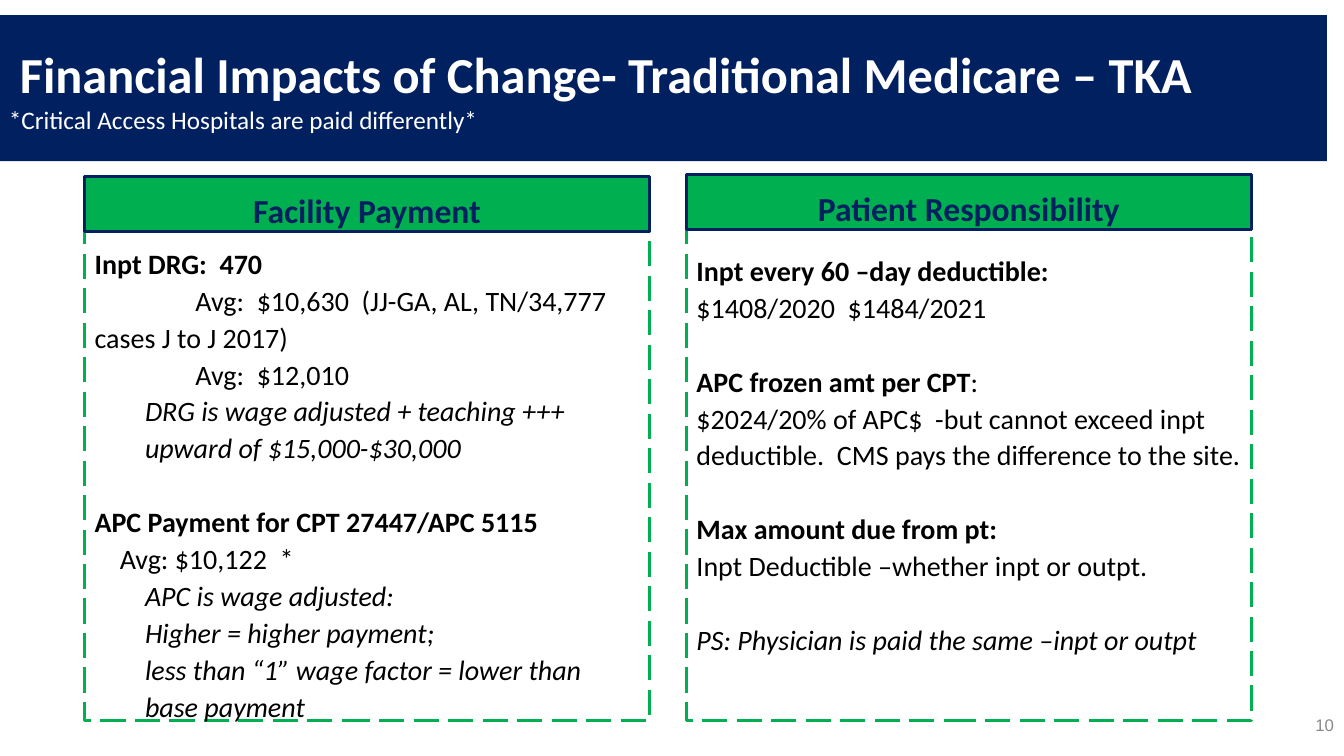
from pptx import Presentation
from pptx.dml.color import RGBColor
from pptx.enum.dml import MSO_LINE
from pptx.enum.shapes import MSO_SHAPE
from pptx.enum.text import MSO_ANCHOR, PP_ALIGN
from pptx.oxml.ns import qn
from pptx.util import Inches, Pt
from lxml.etree import SubElement

NAVY = RGBColor(0x00, 0x20, 0x60)
GREEN = RGBColor(0x00, 0xB0, 0x50)
WHITE = RGBColor(0xFF, 0xFF, 0xFF)
BLACK = RGBColor(0x00, 0x00, 0x00)
GRAY = RGBColor(0x89, 0x89, 0x89)

SLIDE_WIDTH, SLIDE_HEIGHT = 13.33, 7.5
COLUMN_WIDTH, COLUMN_BOTTOM = 5.6, 7.15
HEADER_HEIGHT = 0.55
BLANK_LINE = 26.4

BOLD, PLAIN, ITALIC = "bold", "plain", "italic"

# Each paragraph: runs, left margin, first-line indent, space before in lines
FACILITY_PAYMENT = [
    ([("Inpt DRG:  470", BOLD)], 0, 0, 0),
    ([("Avg:  $10,630  (JJ-GA, AL, TN/34,777 cases J to J 2017)", PLAIN)], 0, 1, 0),
    ([("Avg:  $12,010", PLAIN)], 0, 1, 0),
    ([("DRG is wage adjusted + teaching +++  upward of $15,000-$30,000", ITALIC)], 0.5, 0, 0),
    ([("APC Payment for CPT 27447/APC 5115", BOLD)], 0, 0, 1),
    ([("Avg: $10,122  *", PLAIN)], 0, 0.25, 0),
    ([("APC is wage adjusted:", ITALIC)], 0.5, 0, 0),
    ([("Higher = higher payment;", ITALIC)], 0.5, 0, 0),
    ([("less than “1” wage factor = lower than base payment", ITALIC)], 0.5, 0, 0),
]
PATIENT_RESPONSIBILITY = [
    ([("Inpt every 60 –day deductible:", BOLD)], 0, 0, 0),
    ([("$1408/2020\t$1484/2021", PLAIN)], 0, 0, 0),
    ([("APC frozen amt per CPT", BOLD), (":", PLAIN)], 0, 0, 1),
    ([("$2024/20% of APC$  -but cannot exceed inpt deductible.  "
       "CMS pays the difference to the site.", PLAIN)], 0, 0, 0),
    ([("Max amount due from pt:", BOLD)], 0, 0, 1),
    ([("Inpt Deductible –whether inpt or outpt.", PLAIN)], 0, 0, 0),
    ([("PS: Physician is paid the same –inpt or outpt", ITALIC)], 0, 0, 1),
]


def add_run(paragraph, text, size, color, style=PLAIN, font_name="Calibri"):
    """Add one formatted run to a paragraph."""
    run = paragraph.add_run()
    run.text = text
    run.font.name = font_name
    run.font.size = Pt(size)
    run.font.color.rgb = color
    run.font.bold = style == BOLD
    run.font.italic = style == ITALIC


def indent_paragraph(paragraph, margin, first_line, tab_stop=None):
    """Set a paragraph's left margin, first-line indent and tab stop in inches."""
    properties = paragraph._p.get_or_add_pPr()
    properties.set("marL", str(Inches(margin)))
    properties.set("indent", str(Inches(first_line)))
    if tab_stop:
        tab_list = SubElement(properties, qn("a:tabLst"))
        SubElement(tab_list, qn("a:tab"), pos=str(Inches(tab_stop)), algn="l")


def add_rectangle(slide, box, fill=None, line=None):
    """Add a flat rectangle with an optional fill and outline."""
    shape = slide.shapes.add_shape(MSO_SHAPE.RECTANGLE, *map(Inches, box))
    shape.shadow.inherit = False
    if fill is None:
        shape.fill.background()
    else:
        shape.fill.solid()
        shape.fill.fore_color.rgb = fill
    if line is None:
        shape.line.fill.background()
    else:
        shape.line.color.rgb = line
        shape.line.width = Pt(2.25)
    return shape


def add_title(slide, box):
    """Add the title band with its heading and footnote line."""
    frame = add_rectangle(slide, box, fill=NAVY).text_frame
    frame.word_wrap = True
    frame.vertical_anchor = MSO_ANCHOR.MIDDLE
    frame.margin_top = Inches(0.13)
    heading, note = frame.paragraphs[0], frame.add_paragraph()
    for paragraph in (heading, note):
        paragraph.alignment = PP_ALIGN.LEFT
        paragraph.line_spacing = 0.9
    heading.space_after = Pt(2)
    indent_paragraph(heading, 0, 0.11)
    add_run(heading, "Financial Impacts of Change- Traditional Medicare – TKA", 36, WHITE, BOLD)
    add_run(note, "*Critical Access Hospitals are paid differently*", 18, WHITE)


def add_column(slide, left, top, text_offset, heading, paragraphs):
    """Add a dashed column with a green header and body text."""
    frame_top = top + HEADER_HEIGHT
    text_top = frame_top + text_offset
    outline = add_rectangle(
        slide, (left, frame_top, COLUMN_WIDTH, COLUMN_BOTTOM - frame_top), line=GREEN)
    outline.line.dash_style = MSO_LINE.LONG_DASH

    body = slide.shapes.add_textbox(
        *map(Inches, (left, text_top, COLUMN_WIDTH, COLUMN_BOTTOM - text_top))).text_frame
    body.word_wrap = True
    for index, (runs, margin, first_line, gap) in enumerate(paragraphs):
        paragraph = body.add_paragraph() if index else body.paragraphs[0]
        paragraph.line_spacing = 1.1
        paragraph.space_before = Pt(gap * BLANK_LINE)
        has_tab = any("\t" in text for text, style in runs)
        indent_paragraph(paragraph, margin, first_line, 1.63 if has_tab else None)
        for text, style in runs:
            add_run(paragraph, text, 20, BLACK, style)

    header = add_rectangle(slide, (left, top, COLUMN_WIDTH, HEADER_HEIGHT), GREEN, NAVY).text_frame
    header.word_wrap = True
    header.vertical_anchor = MSO_ANCHOR.TOP
    paragraph = header.paragraphs[0]
    paragraph.alignment = PP_ALIGN.CENTER
    paragraph.line_spacing = 1.2
    add_run(paragraph, heading, 24, NAVY, BOLD)


def add_slide_number(slide, box):
    """Add the right-aligned slide number."""
    frame = slide.shapes.add_textbox(*map(Inches, box)).text_frame
    frame.word_wrap = True
    frame.vertical_anchor = MSO_ANCHOR.MIDDLE
    paragraph = frame.paragraphs[0]
    paragraph.alignment = PP_ALIGN.RIGHT
    add_run(paragraph, "10", 12, GRAY, font_name="Arial")


def main():
    """Build and save the slide."""
    presentation = Presentation()
    presentation.slide_width = Inches(SLIDE_WIDTH)
    presentation.slide_height = Inches(SLIDE_HEIGHT)
    slide = presentation.slides.add_slide(presentation.slide_layouts[6])
    add_title(slide, (-0.01, 0.15, 13.17, 1.45))
    add_column(slide, 0.84, 1.75, 0.06, "Facility Payment", FACILITY_PAYMENT)
    add_column(slide, 6.81, 1.73, 0.15, "Patient Responsibility", PATIENT_RESPONSIBILITY)
    add_slide_number(slide, (SLIDE_WIDTH - 3, 6.99, 3, 0.4))
    presentation.save("out.pptx")


if __name__ == "__main__":
    main()
